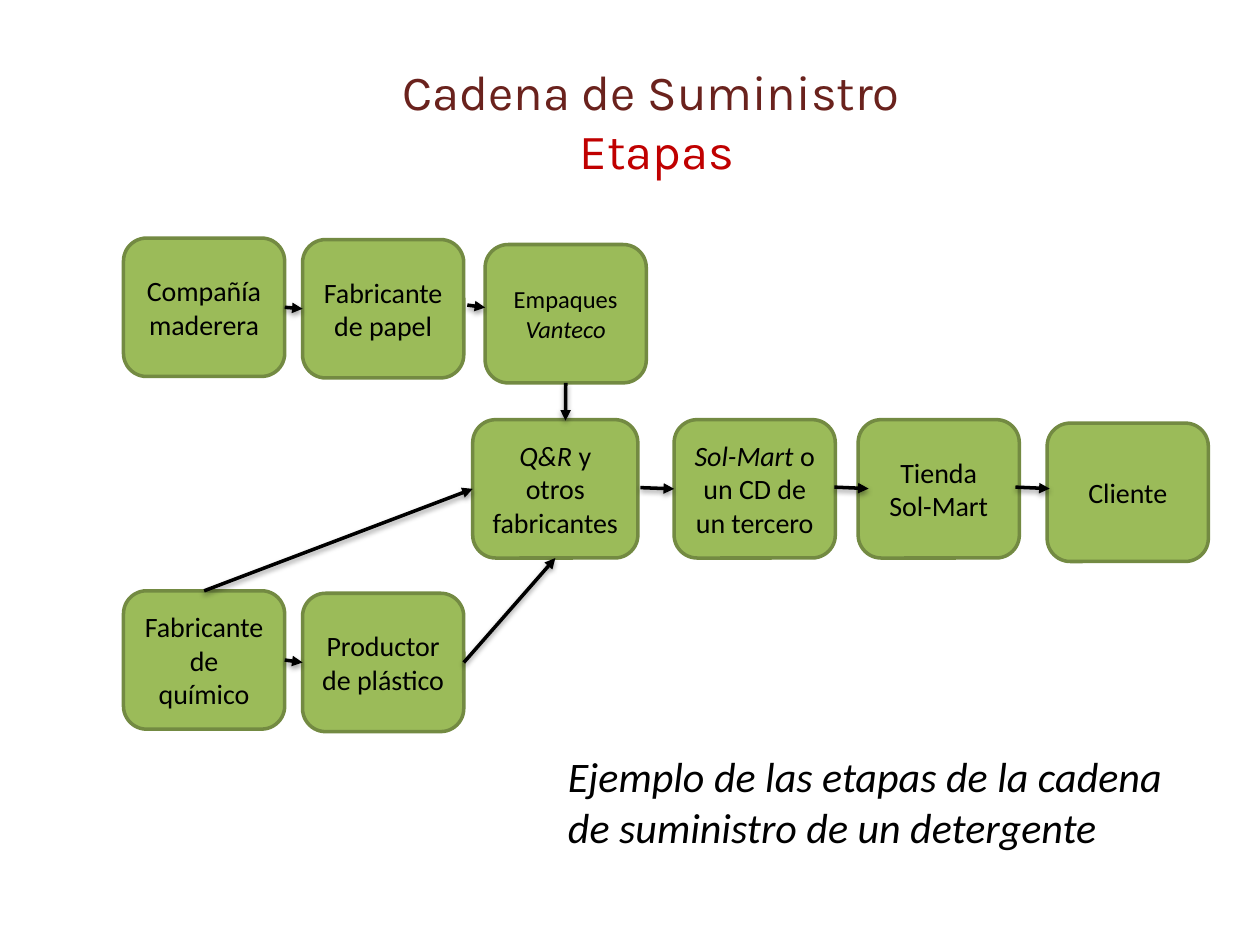
from lxml import etree
from pptx import Presentation
from pptx.dml.color import RGBColor
from pptx.enum.shapes import MSO_CONNECTOR, MSO_SHAPE
from pptx.enum.text import MSO_ANCHOR, MSO_AUTO_SIZE, PP_ALIGN
from pptx.oxml.ns import qn
from pptx.util import Cm, Pt

WINE = RGBColor(0x6A, 0x22, 0x1D)
RED = RGBColor(0xC0, 0x00, 0x00)
GREEN = RGBColor(0x9B, 0xBB, 0x59)
DARK_GREEN = RGBColor(0x73, 0x8A, 0x42)
BLACK = RGBColor(0x00, 0x00, 0x00)

STAGE_WIDTH, STAGE_HEIGHT = 3.25, 2.79
TOP, LEFT, BOTTOM, RIGHT = range(4)


def place_title(slide, left, top, width, height):
    title = slide.shapes.title
    title.left, title.top = Cm(left), Cm(top)
    title.width, title.height = Cm(width), Cm(height)
    frame = title.text_frame
    frame.auto_size = MSO_AUTO_SIZE.NONE
    frame.vertical_anchor = MSO_ANCHOR.MIDDLE
    heading = frame.paragraphs[0]
    heading.alignment = PP_ALIGN.CENTER
    heading.font.name = "Karla"
    heading.font.size = Pt(28)
    subject = heading.add_run()
    subject.text = "Cadena de Suministro "
    subject.font.color.rgb = WINE
    heading.add_line_break()
    topic = heading.add_run()
    topic.text = "Etapas"
    topic.font.color.rgb = RED


def add_stage(slide, left, top, wording, width=STAGE_WIDTH, size=16):
    stage = slide.shapes.add_shape(MSO_SHAPE.ROUNDED_RECTANGLE, Cm(left), Cm(top),
                                   Cm(width), Cm(STAGE_HEIGHT))
    stage.shadow.inherit = False
    stage.fill.solid()
    stage.fill.fore_color.rgb = GREEN
    stage.line.color.rgb = DARK_GREEN
    stage.line.width = Pt(2)
    frame = stage.text_frame
    frame.word_wrap = True
    frame.vertical_anchor = MSO_ANCHOR.MIDDLE
    label = frame.paragraphs[0]
    label.alignment = PP_ALIGN.CENTER
    label.font.name = "Calibri"
    label.font.size = Pt(size)
    label.font.color.rgb = BLACK
    for words, italic in wording:
        run = label.add_run()
        run.text = words
        if italic:
            run.font.italic = True
    return stage


def add_arrow(slide, start, end):
    arrow = slide.shapes.add_connector(MSO_CONNECTOR.STRAIGHT, 0, 0, 0, 0)
    arrow.begin_x, arrow.begin_y = (Cm(n) for n in start if not hasattr(n, "text_frame")) \
        if not hasattr(start[0], "text_frame") else (0, 0)
    if hasattr(start[0], "text_frame"):
        arrow.begin_connect(*start)
    if hasattr(end[0], "text_frame"):
        arrow.end_connect(*end)
    else:
        arrow.end_x, arrow.end_y = Cm(end[0]), Cm(end[1])
    arrow.line.color.rgb = BLACK
    arrow.line.width = Pt(2)
    etree.SubElement(arrow.line._get_or_add_ln(), qn("a:tailEnd"), type="triangle")
    effects = etree.SubElement(arrow._element.spPr, qn("a:effectLst"))
    shadow = etree.SubElement(effects, qn("a:outerShdw"), blurRad=str(Pt(3.1)),
                              dist=str(Pt(1.6)), dir="5400000", rotWithShape="0")
    shade = etree.SubElement(shadow, qn("a:srgbClr"), val=str(BLACK))
    etree.SubElement(shade, qn("a:alpha"), val="38000")


def place_packaging_chain(slide, left, top):
    timber = add_stage(slide, left, top, [("Compañía maderera", False)])
    paper = add_stage(slide, left + 3.61, top + 0.03, [("Fabricante de papel", False)])
    packaging = add_stage(slide, left + 7.29, top + 0.13,
                          [("Empaques ", False), ("Vanteco", True)], size=14)
    add_arrow(slide, (timber, RIGHT), (paper, LEFT))
    add_arrow(slide, (left + 6.93, top + 1.35), (left + 7.29, top + 1.4))
    return packaging


def place_sales_chain(slide, left, top):
    maker = add_stage(slide, left, top,
                      [("Q&R ", True), ("y otros fabricantes", False)], width=3.33)
    depot = add_stage(slide, left + 4.06, top,
                      [("Sol-Mart ", True), ("o un CD de un tercero", False)])
    add_stage(slide, left + 7.77, top, [("Tienda Sol-Mart", False)])
    add_stage(slide, left + 11.58, top + 0.07, [("Cliente", False)])
    add_arrow(slide, (left + 3.38, top + 1.37), (depot, LEFT))
    for start in (7.29, 10.94):
        add_arrow(slide, (left + start, top + 1.36), (left + start + 0.69, top + 1.39))
    return maker


def place_plastic_chain(slide, left, top):
    chemical = add_stage(slide, left, top, [("Fabricante de químico", False)])
    plastic = add_stage(slide, left + 3.61, top + 0.05, [("Productor de plástico", False)])
    add_arrow(slide, (chemical, RIGHT), (plastic, LEFT))
    return chemical, plastic


def place_caption(slide, left, top, width, height):
    caption = slide.shapes.add_textbox(Cm(left), Cm(top), Cm(width), Cm(height))
    frame = caption.text_frame
    frame.word_wrap = True
    frame.auto_size = MSO_AUTO_SIZE.SHAPE_TO_FIT_TEXT
    example = frame.paragraphs[0]
    example.text = "Ejemplo de las etapas de la cadena de suministro de un detergente"
    example.font.name = "Calibri"
    example.font.size = Pt(24)
    example.font.italic = True
    example.font.color.rgb = BLACK


def main():
    deck = Presentation()
    deck.slide_width, deck.slide_height = Cm(25.4), Cm(19.05)
    slide = deck.slides.add_slide(deck.slide_layouts[5])
    place_title(slide, 3.53, 0.84, 19.43, 3.18)
    packaging = place_packaging_chain(slide, 2.49, 4.8)
    maker = place_sales_chain(slide, 9.53, 8.46)
    chemical, plastic = place_plastic_chain(slide, 2.49, 11.91)
    add_arrow(slide, (packaging, BOTTOM), (11.4, 8.48))
    add_arrow(slide, (chemical, TOP), (maker, LEFT))
    add_arrow(slide, (plastic, RIGHT), (maker, BOTTOM))
    place_caption(slide, 11.2, 15.01, 12.9, 2.31)
    deck.save("out.pptx")


if __name__ == "__main__":
    main()
